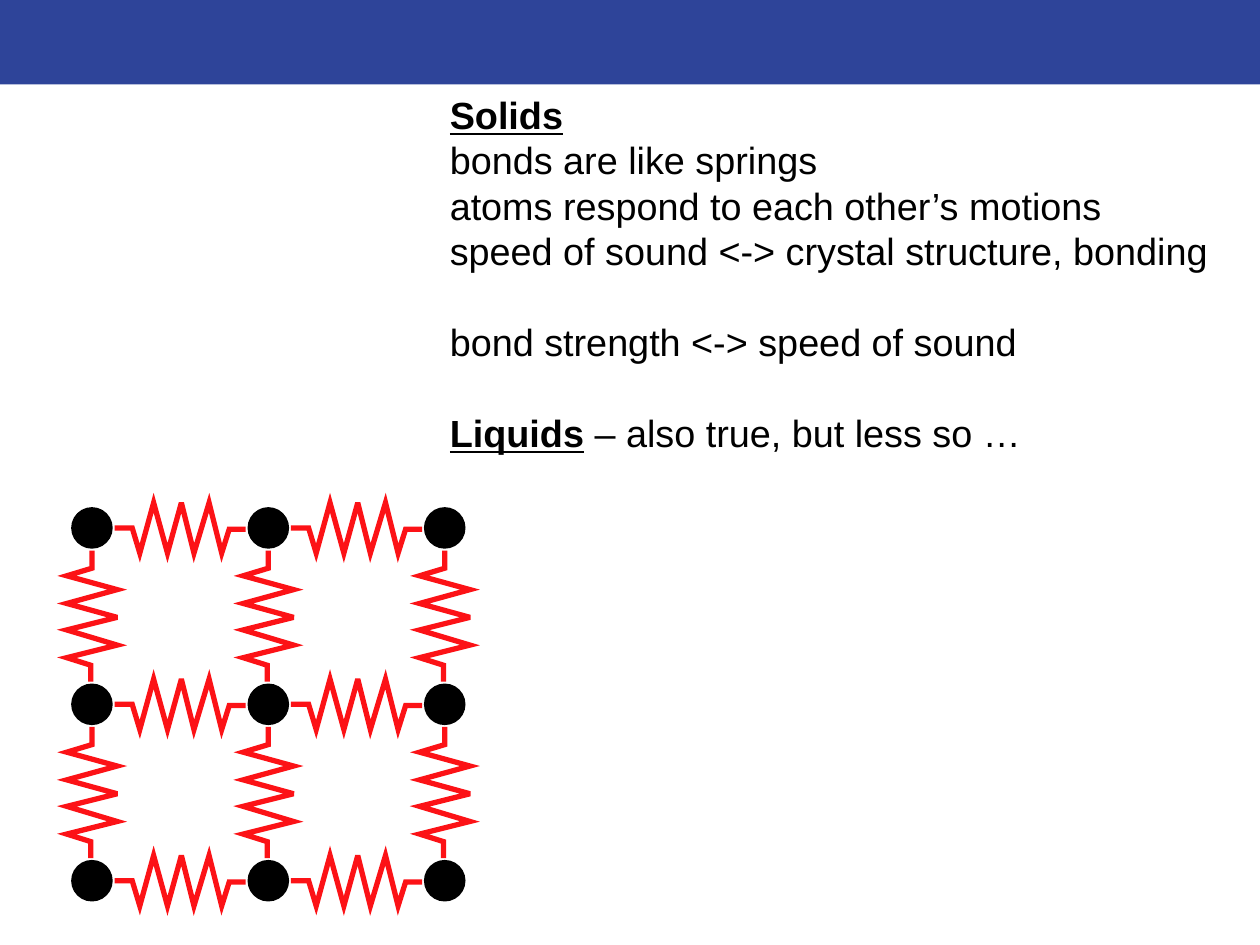
from lxml import etree
from pptx import Presentation
from pptx.dml.color import RGBColor
from pptx.enum.shapes import MSO_SHAPE
from pptx.enum.text import MSO_ANCHOR
from pptx.oxml.ns import qn
from pptx.util import Inches, Pt

RECT, OVAL = MSO_SHAPE.RECTANGLE, MSO_SHAPE.OVAL
MIDDLE = MSO_ANCHOR.MIDDLE

THEME = {"bar": "2E4499", "ink": "000000", "spring": "FC1216",
         "font": "Arial", "size": 21.6, "lead": 26, "line": 3}

# Each line: heading part, plain part, blank space above in lines
LINES = [
    ("Solids", "", 0),
    ("", "bonds are like springs", 0),
    ("", "atoms respond to each other’s motions", 0),
    ("", "speed of sound <-> crystal structure, bonding", 0),
    ("", "bond strength <-> speed of sound", 1),
    ("Liquids", " – also true, but less so …", 1),
]

# Lattice: centre of the first atom, pitch, atom size, atoms per side
LEFT, TOP, STEP, ATOM, COUNT = 0.73, 4.19, 1.4, 0.33, 3
# Spring outline, measured from its left end
COIL = [(0, 0), (0.14, 0), (0.2, 0.2), (0.31, -0.2), (0.42, 0.2), (0.53, -0.2),
        (0.63, 0.2), (0.75, -0.2), (0.85, 0.2), (0.91, 0.01), (1.04, 0.01)]


def color(name):
    return RGBColor.from_string(THEME[name])


def add_text(para, text, bold=False, line=False):
    run = para.add_run()
    run.text = text
    font = run.font
    font.name, font.size = THEME["font"], Pt(THEME["size"])
    font.bold, font.underline = bold, line
    font.color.rgb = color("ink")


def add_solid(shapes, kind, box, fill):
    shape = shapes.add_shape(kind, *map(Inches, box))
    shape.shadow.inherit = False
    shape.fill.solid()
    shape.fill.fore_color.rgb = color(fill)
    shape.line.fill.background()


def add_spring(shapes, x, y, turn=0):
    """Draw a spring centred on x, y."""
    left = x - COIL[-1][0] / 2
    pts = [(Inches(left + dx), Inches(y + dy)) for dx, dy in COIL]
    pen = shapes.build_freeform(*pts[0])
    pen.add_line_segments(pts[1:], close=False)
    shape = pen.convert_to_shape()
    shape.shadow.inherit = False
    shape.fill.background()
    shape.line.color.rgb = color("spring")
    shape.line.width = Pt(THEME["line"])
    # Sharp corners
    edge = shape.line._get_or_add_ln()
    etree.SubElement(edge, qn("a:miter")).set("lim", "800000")
    shape.rotation = turn


def main():
    deck = Presentation()
    deck.slide_width, deck.slide_height = Inches(10), Inches(7.5)
    slide = deck.slides.add_slide(deck.slide_layouts[6])

    # Top bar
    add_solid(slide.shapes, RECT, (-0.01, 0, 10.02, 0.67), "bar")

    # Notes on solids and liquids
    box = slide.shapes.add_textbox(*map(Inches, (3.53, 0.68, 6.2, 2.98)))
    frame = box.text_frame
    frame.word_wrap, frame.vertical_anchor = True, MIDDLE
    frame.margin_left = frame.margin_right = Inches(0.04)
    frame.margin_top = frame.margin_bottom = Inches(0.04)
    for i, (head, body, gap) in enumerate(LINES):
        para = frame.add_paragraph() if i else frame.paragraphs[0]
        para.line_spacing = Pt(THEME["lead"])
        if gap:
            para.space_before = Pt(gap * THEME["lead"])
        if head:
            add_text(para, head, bold=True, line=True)
        if body:
            add_text(para, body)

    # Lattice of atoms joined by springs
    grid = slide.shapes.add_group_shape().shapes
    for row in range(COUNT):
        for col in range(COUNT):
            x, y = LEFT + col * STEP, TOP + row * STEP
            add_solid(grid, OVAL, (x - ATOM / 2, y - ATOM / 2, ATOM, ATOM), "ink")
            if col < COUNT - 1:
                add_spring(grid, x + STEP / 2, y)
            if row < COUNT - 1:
                add_spring(grid, x, y + STEP / 2, turn=90)

    deck.save("out.pptx")


if __name__ == "__main__":
    main()
